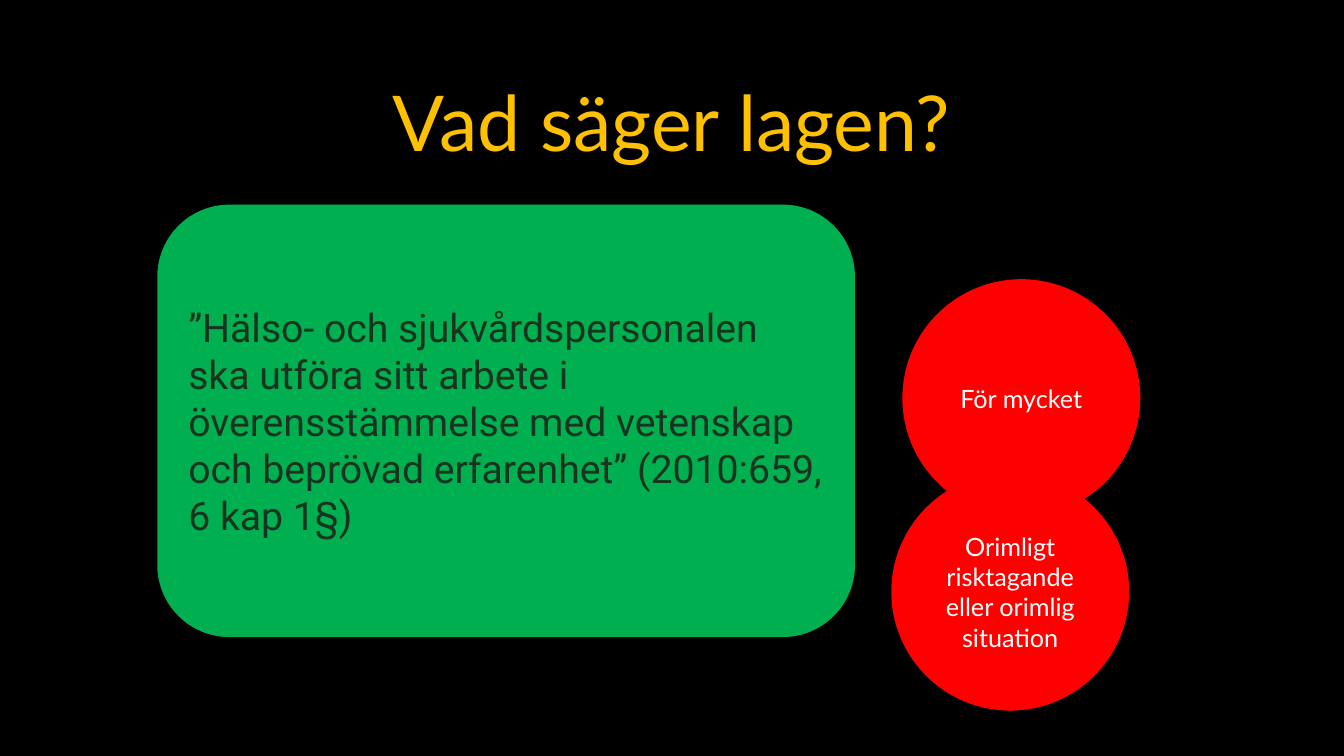
from dataclasses import dataclass

from pptx import Presentation
from pptx import util as u
from pptx.dml.color import RGBColor as Rgb
from pptx.enum import shapes, text


@dataclass(frozen=True)
class Theme:
    back: str = "000000"
    gold: str = "FFC000"
    green: str = "00B050"
    red: str = "FF0000"
    ink: str = "18331F"
    white: str = "FFFFFF"
    head: str = "Lato"
    body: str = "Roboto"
    big: int = 55
    mid: int = 28
    small: int = 18


THEME = Theme()
WIDE, HIGH = 13.33, 7.5
LEFT, CENTER = text.PP_ALIGN.LEFT, text.PP_ALIGN.CENTER


def write(shape, words, font, size, color, align=CENTER):
    frame = shape.text_frame
    frame.word_wrap = True
    frame.auto_size = text.MSO_AUTO_SIZE.NONE
    frame.vertical_anchor = text.MSO_ANCHOR.MIDDLE
    para = frame.paragraphs[0]
    para.alignment = align
    run = para.add_run()
    run.text = words
    run.font.name = font
    run.font.size = u.Pt(size)
    run.font.color.rgb = Rgb.from_string(color)


def block(slide, kind, box, fill):
    shape = slide.shapes.add_shape(kind, *map(u.Inches, box))
    shape.shadow.inherit = False
    shape.fill.solid()
    shape.fill.fore_color.rgb = Rgb.from_string(fill)
    shape.line.fill.background()
    return shape


def title(slide, box, words):
    head = slide.shapes.title
    head.left, head.top, head.width, head.height = map(u.Inches, box)
    write(head, words, THEME.head, THEME.big, THEME.gold)


def quote(slide, box, words):
    card = block(slide, shapes.MSO_SHAPE.ROUNDED_RECTANGLE, box, THEME.green)
    write(card, words, THEME.body, THEME.mid, THEME.ink, LEFT)


def risks(slide, box, lower, upper):
    """Two overlapping discs, the lower one shifted left, filling the box."""
    left, top, wide, high = box
    size = 2.36
    low = (left, top + high - size, size, size)
    up = (left + wide - size, top, size, size)
    for place, words, inset in ((low, lower, 0), (up, upper, 0.1)):
        disc = block(slide, shapes.MSO_SHAPE.OVAL, place, THEME.red)
        frame = disc.text_frame
        frame.margin_left = frame.margin_right = u.Inches(inset)
        write(disc, words, THEME.head, THEME.small, THEME.white)


def main():
    deck = Presentation()
    deck.slide_width, deck.slide_height = u.Inches(WIDE), u.Inches(HIGH)
    slide = deck.slides.add_slide(deck.slide_layouts[5])
    slide.background.fill.solid()
    slide.background.fill.fore_color.rgb = Rgb.from_string(THEME.back)

    title(slide, (1, 0.67, 11.32, 1.06), "Vad säger lagen?")
    quote(slide, (1.56, 2.03, 6.92, 4.29),
          "”Hälso- och sjukvårdspersonalen ska utföra sitt arbete i "
          "överensstämmelse med vetenskap och beprövad erfarenhet” "
          "(2010:659, 6 kap 1§)")
    risks(slide, (8.84, 2.77, 2.47, 4.28),
          "Orimligt risktagande eller orimlig situation", "För mycket")
    deck.save("out.pptx")


if __name__ == "__main__":
    main()
